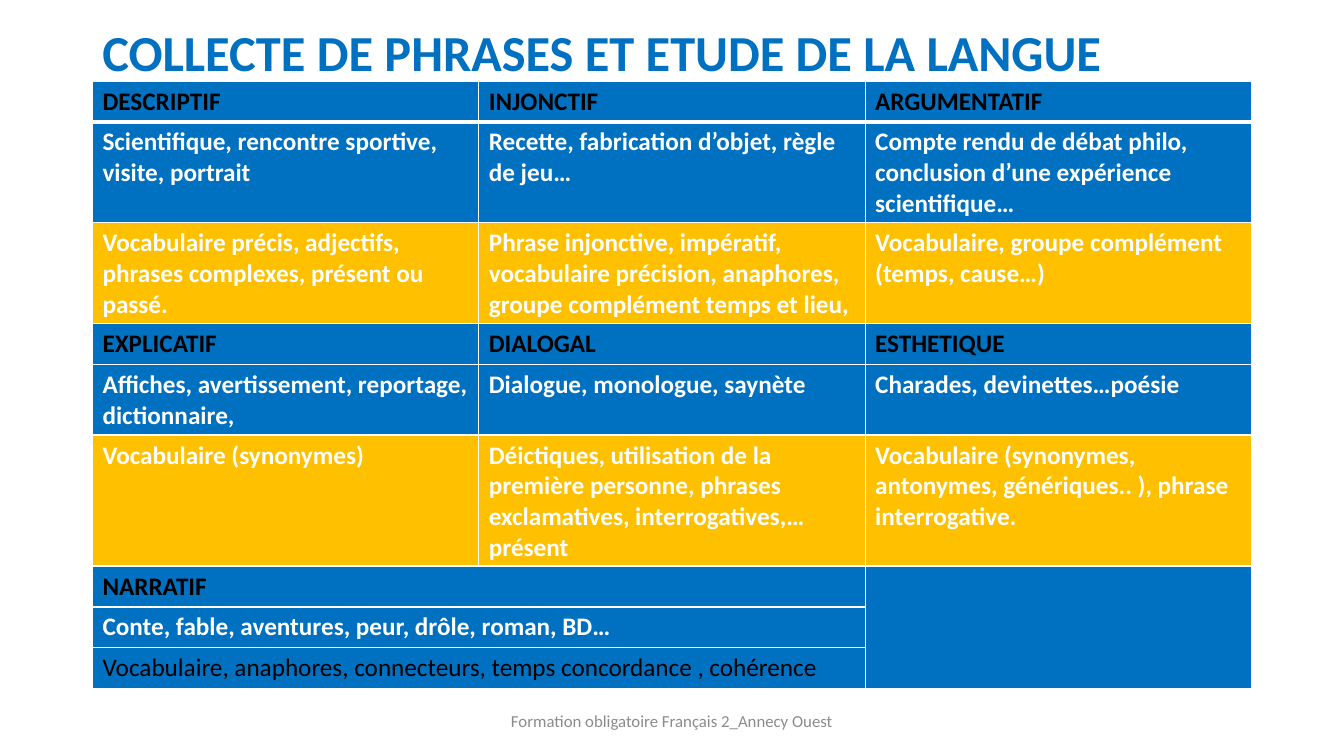
import pptx
import pptx.dml.color
import pptx.enum.text
import pptx.oxml
import pptx.oxml.ns
import pptx.util
from pptx.util import Cm

BLUE = pptx.dml.color.RGBColor(0x00, 0x70, 0xC0)
GOLD = pptx.dml.color.RGBColor(0xFF, 0xC0, 0x00)
BLACK = pptx.dml.color.RGBColor(0x00, 0x00, 0x00)
WHITE = pptx.dml.color.RGBColor(0xFF, 0xFF, 0xFF)
GREY = pptx.dml.color.RGBColor(0x8C, 0x8C, 0x8C)

HEADING = (BLUE, BLACK, True)
EXAMPLES = (BLUE, WHITE, True)
LANGUAGE = (GOLD, WHITE, True)
NARRATIVE_LANGUAGE = (BLUE, BLACK, False)

ROWS = [
    (HEADING, ["DESCRIPTIF", "INJONCTIF", "ARGUMENTATIF"]),
    (EXAMPLES, [
        "Scientifique, rencontre sportive, visite, portrait",
        "Recette, fabrication d’objet, règle de jeu…",
        "Compte rendu de débat philo, conclusion d’une expérience scientifique…",
    ]),
    (LANGUAGE, [
        "Vocabulaire précis, adjectifs, phrases complexes, présent ou passé.",
        "Phrase injonctive, impératif, vocabulaire précision, anaphores, "
        "groupe complément temps et lieu,",
        "Vocabulaire, groupe complément (temps, cause…)",
    ]),
    (HEADING, ["EXPLICATIF", "DIALOGAL", "ESTHETIQUE"]),
    (EXAMPLES, [
        "Affiches, avertissement, reportage, dictionnaire,",
        "Dialogue, monologue, saynète",
        "Charades, devinettes…poésie",
    ]),
    (LANGUAGE, [
        "Vocabulaire (synonymes)",
        "Déictiques, utilisation de la première personne, phrases "
        "exclamatives, interrogatives,… présent",
        "Vocabulaire (synonymes, antonymes, génériques.. ), phrase interrogative.",
    ]),
    (HEADING, ["NARRATIF", "", ""]),
    (EXAMPLES, ["Conte, fable, aventures, peur, drôle, roman, BD…", "", ""]),
    (NARRATIVE_LANGUAGE, [
        "Vocabulaire, anaphores, connecteurs, temps concordance , cohérence", "", "",
    ]),
]
COLUMN_COUNT = 3
NARRATIVE_ROW = 6


def format_runs(paragraph, size, color, bold):
    for run in paragraph.runs:
        run.font.name = "Calibri"
        run.font.size = pptx.util.Pt(size)
        run.font.bold = bold
        run.font.color.rgb = color


def add_text(slide, text, box, size, color, bold=False, alignment=None):
    shape = slide.shapes.add_textbox(*box)
    text_frame = shape.text_frame
    text_frame.word_wrap = True
    text_frame.vertical_anchor = pptx.enum.text.MSO_ANCHOR.MIDDLE
    text_frame.text = text
    paragraph = text_frame.paragraphs[0]
    paragraph.alignment = alignment
    format_runs(paragraph, size, color, bold)
    return paragraph


def set_borders(cell, top=1, bottom=1):
    properties = cell._tc.get_or_add_tcPr()
    for side, width in (("L", 1), ("R", 1), ("T", top), ("B", bottom)):
        properties.append(pptx.oxml.parse_xml(
            f'<a:ln{side} {pptx.oxml.ns.nsdecls("a")} w="{pptx.util.Pt(width)}">'
            f'<a:solidFill><a:srgbClr val="{WHITE}"/></a:solidFill></a:ln{side}>'
        ))


def fill_cell(cell, text, style, row_index):
    background, color, bold = style
    set_borders(cell, top=3 if row_index == 1 else 1, bottom=3 if row_index == 0 else 1)
    cell.fill.solid()
    cell.fill.fore_color.rgb = background
    if text:
        cell.text_frame.text = text
        format_runs(cell.text_frame.paragraphs[0], 18, color, bold)


def add_text_types_table(slide):
    row_height = Cm(1.03)
    shape = slide.shapes.add_table(
        len(ROWS), COLUMN_COUNT, Cm(2.33), Cm(2.04), Cm(29.21), row_height * len(ROWS)
    )
    table = shape.table
    for row_index, (style, texts) in enumerate(ROWS):
        table.rows[row_index].height = row_height
        for column_index, text in enumerate(texts):
            fill_cell(table.cell(row_index, column_index), text, style, row_index)
    last_row = len(ROWS) - 1
    for row_index in range(NARRATIVE_ROW, len(ROWS)):
        table.cell(row_index, 0).merge(table.cell(row_index, 1))
    table.cell(NARRATIVE_ROW, 2).merge(table.cell(last_row, 2))


def main():
    presentation = pptx.Presentation()
    presentation.slide_width = Cm(33.87)
    presentation.slide_height = Cm(19.05)
    slide = presentation.slides.add_slide(presentation.slide_layouts[6])
    title = add_text(
        slide, "COLLECTE DE PHRASES ET ETUDE DE LA LANGUE",
        (Cm(2.33), Cm(0.36), Cm(29.21), Cm(2.06)), 36, BLUE, bold=True,
    )
    title.line_spacing = 0.9
    add_text_types_table(slide)
    add_text(
        slide, "Formation obligatoire Français 2_Annecy Ouest",
        (Cm(11.22), Cm(17.66), Cm(11.43), Cm(1.01)), 12, GREY,
        alignment=pptx.enum.text.PP_ALIGN.CENTER,
    )
    presentation.save("out.pptx")


if __name__ == "__main__":
    main()
